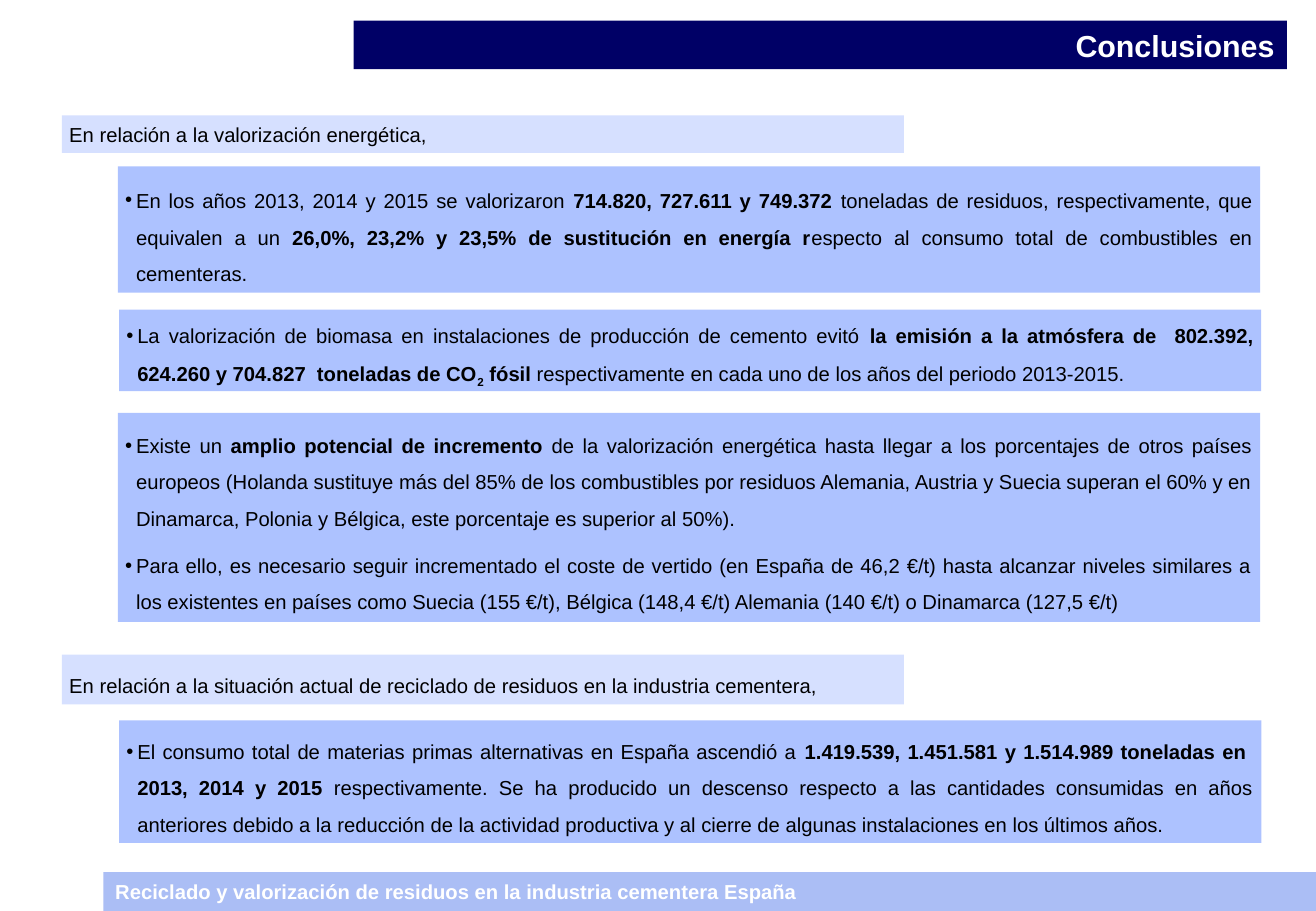
from pptx import Presentation
from pptx.dml.color import RGBColor
from pptx.enum import text as t
from pptx.oxml.ns import qn
from pptx.util import Emu, Pt
from lxml import etree

EMU_PER_PX = 9144
NAVY, PALE, BLUE, FOOTER = "000066", "D6E0FF", "ADC2FF", "ABBEF5"
BLACK, WHITE = "000000", "FFFFFF"
BOLD = {"bold": True}
SUBSCRIPT = {"bold": True, "baseline": -25000}
PANEL_WIDTH, HEADING_WIDTH = 940, 693
INSET_X, INSET_Y, BULLET_INDENT = 6, 5, 9

HEADINGS = [
    (95, 31, 1.0, "En relación a la valorización energética,"),
    (539, 41, 1.5, "En relación a la situación actual de reciclado de residuos en la industria cementera,"),
]

PANELS = [
    (97, 137, 104, [[
        ("En los años 2013, 2014 y 2015 se valorizaron ", {}),
        ("714.820, 727.611 y 749.372", BOLD),
        (" ", {"size": 13}),
        ("toneladas de residuos, respectivamente, que equivalen a un", {}),
        (" 26,0%, 23,2% y 23,5% de sustitución en energía r", BOLD),
        ("especto al consumo total de combustibles en cementeras.", {}),
    ]]),
    (98, 255, 67, [[
        ("La valorización de biomasa en instalaciones de producción de cemento evitó ", {}),
        ("la emisión a la atmósfera de  802.392, 624.260 y 704.827  toneladas de CO", BOLD),
        ("2", SUBSCRIPT),
        (" fósil ", BOLD),
        ("respectivamente en cada uno de los años del periodo 2013-2015.", {}),
    ]]),
    (97, 340, 172, [[
        ("Existe un ", {}),
        ("amplio potencial de incremento ", BOLD),
        ("de la valorización energética hasta llegar a los porcentajes de otros países europeos "
         "(Holanda sustituye más del 85% de los combustibles por residuos Alemania, Austria y Suecia "
         "superan el 60% y en Dinamarca, Polonia y Bélgica, este porcentaje es superior al 50%).", {}),
    ], [
        ("Para ello, es necesario seguir incrementado el coste de vertido (en España de 46,2 €/t) "
         "hasta alcanzar niveles similares a los existentes en países como Suecia (155 €/t), "
         "Bélgica (148,4 €/t) Alemania (140 €/t) o Dinamarca (127,5 €/t)", {}),
    ]]),
    (98, 593, 101, [[
        ("El consumo total de materias primas alternativas en España ascendió a ", {}),
        ("1.419.539, 1.451.581 y 1.514.989 toneladas en  2013, 2014 y 2015 ", BOLD),
        ("respectivamente. Se ha producido un descenso respecto a las cantidades consumidas en años "
         "anteriores debido a la reducción de la actividad productiva y al cierre de algunas "
         "instalaciones en los últimos años.", {}),
    ]]),
]


def px(length):
    return Emu(length * EMU_PER_PX)


def color(value):
    return RGBColor.from_string(value)


def write(paragraph, content, size=12, bold=False, ink=BLACK, baseline=None):
    run = paragraph.add_run()
    run.text = content
    run.font.name = "Arial"
    run.font.size = Pt(size)
    run.font.bold = bold
    run.font.color.rgb = color(ink)
    if baseline:
        run.font._element.set("baseline", str(baseline))


def align(paragraph, side=t.PP_ALIGN.JUSTIFY, spacing=1.0, before=0.0, bullet=False):
    paragraph.alignment = side
    paragraph.line_spacing = spacing
    paragraph.space_before = Pt(before)
    properties = paragraph._p.get_or_add_pPr()
    indent = px(BULLET_INDENT) if bullet else 0
    properties.set("marL", str(indent))
    properties.set("indent", str(-indent))
    if bullet:
        etree.SubElement(properties, qn("a:buFont"), typeface="Arial")
        etree.SubElement(properties, qn("a:buChar"), char="•")
    else:
        etree.SubElement(properties, qn("a:buNone"))


def place_band(slide, slot, box, fill, inset_x=INSET_X, anchor=t.MSO_ANCHOR.MIDDLE):
    left, top, width, height = map(px, box)
    if slot is None:
        band = slide.shapes.add_textbox(left, top, width, height)
    else:
        band = slide.placeholders[slot]
        band.left, band.top, band.width, band.height = left, top, width, height
    band.fill.solid()
    band.fill.fore_color.rgb = color(fill)
    frame = band.text_frame
    frame.word_wrap = True
    frame.auto_size = t.MSO_AUTO_SIZE.NONE
    frame.vertical_anchor = anchor
    frame.margin_left = frame.margin_right = px(inset_x)
    frame.margin_top = frame.margin_bottom = px(INSET_Y)
    return frame


def add_line(slide, slot, box, fill, content, side=t.PP_ALIGN.JUSTIFY, spacing=1.0,
             inset_x=INSET_X, anchor=t.MSO_ANCHOR.MIDDLE, **style):
    paragraph = place_band(slide, slot, box, fill, inset_x, anchor).paragraphs[0]
    align(paragraph, side, spacing)
    write(paragraph, content, **style)


def add_panel(slide, slot, box, conclusions):
    frame = place_band(slide, slot, box, BLUE)
    for number, pieces in enumerate(conclusions):
        paragraph = frame.add_paragraph() if number else frame.paragraphs[0]
        align(paragraph, spacing=1.5, before=6.5 if number else 0, bullet=True)
        for content, style in pieces:
            write(paragraph, content, **style)


def main():
    deck = Presentation()
    deck.slide_width, deck.slide_height = px(1083), px(750)
    slide = deck.slides.add_slide(deck.slide_layouts.get_by_name("Comparison"))

    add_line(slide, None, (85, 718, 998, 32), FOOTER,
             "Reciclado y valorización de residuos en la industria cementera España",
             side=t.PP_ALIGN.LEFT, inset_x=10, bold=True, ink=WHITE)
    add_line(slide, 0, (291, 17, 768, 40), NAVY, "Conclusiones", side=t.PP_ALIGN.RIGHT,
             inset_x=10, anchor=t.MSO_ANCHOR.TOP, size=18, bold=True, ink=WHITE)
    for slot, (top, height, spacing, heading) in zip((1, 3), HEADINGS):
        add_line(slide, slot, (51, top, HEADING_WIDTH, height), PALE, heading, spacing=spacing)
    for slot, (left, top, height, conclusions) in zip((2, None, None, 4), PANELS):
        add_panel(slide, slot, (left, top, PANEL_WIDTH, height), conclusions)

    deck.save("out.pptx")


if __name__ == "__main__":
    main()
